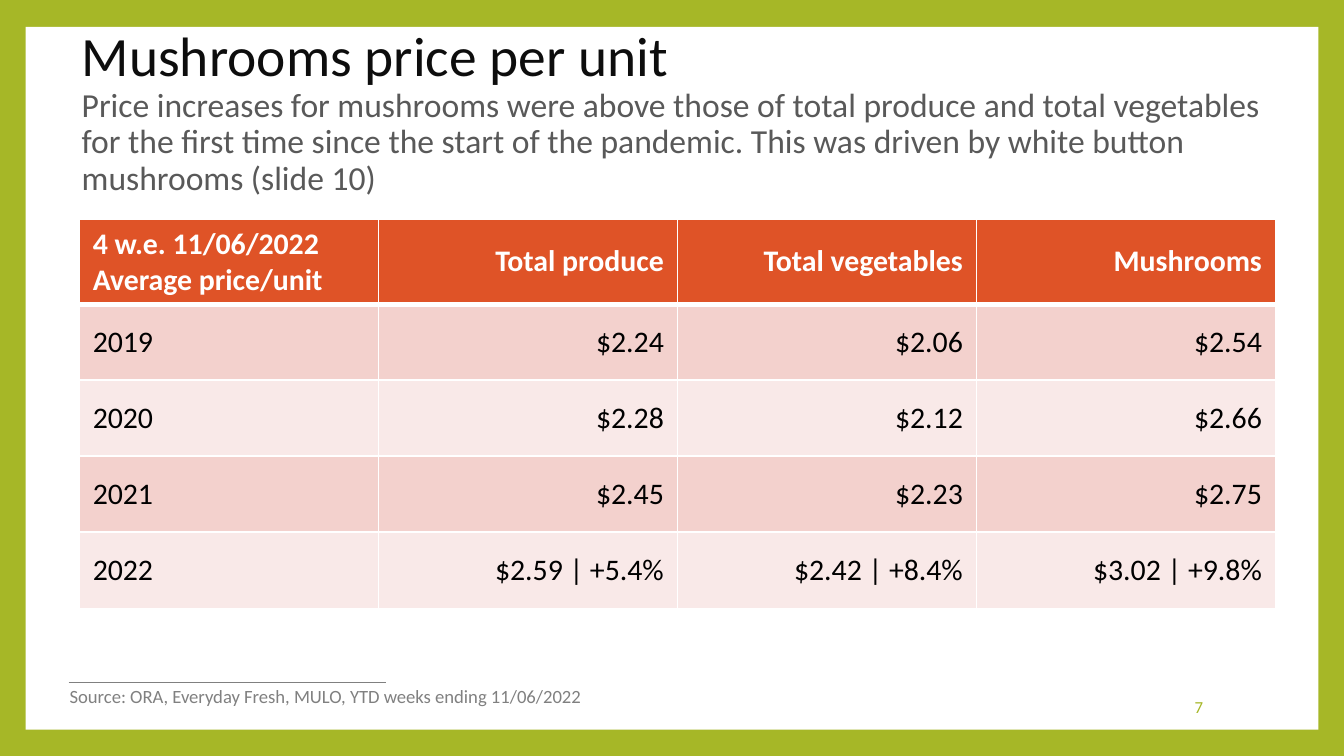
from lxml.etree import SubElement as Sub
from pptx import Presentation
from pptx.dml.color import RGBColor as RGB
from pptx.enum.shapes import MSO_CONNECTOR as Link, MSO_SHAPE as Form
from pptx.enum.text import MSO_ANCHOR as Anchor, PP_ALIGN as Align
from pptx.oxml.ns import qn
from pptx.util import Inches, Pt

GREEN = RGB(0xA6, 0xB7, 0x27)
WHITE = RGB(0xFF, 0xFF, 0xFF)
BLACK = RGB(0x00, 0x00, 0x00)
INK = RGB(0x0D, 0x0D, 0x0D)
SLATE = RGB(0x59, 0x59, 0x59)
GREY = RGB(0x80, 0x80, 0x80)
ORANGE = RGB(0xDF, 0x53, 0x27)
ROSE = RGB(0xF3, 0xD1, 0xCD)
BLUSH = RGB(0xF9, 0xE9, 0xE8)

COLS, ROWS = 100, 56.25
PRICES = [
    ["4 w.e. 11/06/2022\nAverage price/unit", "Total produce", "Total vegetables", "Mushrooms"],
    ["2019", "$2.24", "$2.06", "$2.54"],
    ["2020", "$2.28", "$2.12", "$2.66"],
    ["2021", "$2.45", "$2.23", "$2.75"],
    ["2022", "$2.59 | +5.4%", "$2.42 | +8.4%", "$3.02 | +9.8%"],
]


def grid(*cells):
    """Turn grid columns or rows into lengths."""
    return [Inches(cell / 10) for cell in cells]


def write(par, text, size=16, color=BLACK, bold=False, align=Align.LEFT, font="Calibri"):
    """Add a formatted run to a paragraph."""
    par.alignment = align
    run = par.add_run()
    run.text = text
    run.font.name, run.font.size, run.font.bold = font, Pt(size), bold
    run.font.color.rgb = color


def edge(cell, **widths):
    """Give a cell white borders of the named widths."""
    props = cell._tc.get_or_add_tcPr()
    for side, width in widths.items():
        line = Sub(props, qn(f"a:ln{side}"), w=str(Pt(width)))
        Sub(Sub(line, qn("a:solidFill")), qn("a:srgbClr"), val=str(WHITE))


class Deck:
    """Hold the style and the current slide."""

    def __init__(self):
        """Open a blank slide with a green ground."""
        self.file = Presentation()
        self.file.slide_width, self.file.slide_height = grid(COLS, ROWS)
        self.slide = self.file.slides.add_slide(self.file.slide_layouts[6])
        ground = self.slide.background.fill
        ground.solid()
        ground.fore_color.rgb = GREEN

    def panel(self, *box):
        """Draw a plain white panel."""
        shape = self.slide.shapes.add_shape(Form.RECTANGLE, *grid(*box))
        shape.shadow.inherit = False
        shape.fill.solid()
        shape.fill.fore_color.rgb = WHITE
        shape.line.fill.background()

    def rule(self, *ends):
        """Draw a thin grey rule."""
        line = self.slide.shapes.add_connector(Link.STRAIGHT, *grid(*ends))
        line.line.color.rgb, line.line.width = GREY, Pt(0.79)
        Sub(line._element.spPr, qn("a:effectLst"))

    def text(self, *box, anchor=Anchor.MIDDLE):
        """Add a text box and return its first paragraph."""
        frame = self.slide.shapes.add_textbox(*grid(*box)).text_frame
        frame.word_wrap, frame.vertical_anchor = True, anchor
        return frame.paragraphs[0]

    def table(self, data, left, top, width, head, step):
        """Add a table with a tall head row and striped rows."""
        size = grid(left, top, width, head + step * (len(data) - 1))
        table = self.slide.shapes.add_table(len(data), len(data[0]), *size).table
        for i, row in enumerate(data):
            table.rows[i].height = grid(step if i else head)[0]
            for j, text in enumerate(row):
                self.cell(table.cell(i, j), text, i, j)

    def cell(self, cell, text, row, col):
        """Fill one cell by its place in the table."""
        edge(cell, L=1, R=1, T=3 if row == 1 else 1, B=1 if row else 3)
        cell.fill.solid()
        cell.fill.fore_color.rgb = (ROSE if row % 2 else BLUSH) if row else ORANGE
        cell.vertical_anchor = Anchor.MIDDLE
        frame = cell.text_frame
        for k, part in enumerate(text.split("\n")):
            par = frame.add_paragraph() if k else frame.paragraphs[0]
            write(par, part, color=BLACK if row else WHITE, bold=not row,
                  align=Align.RIGHT if col else Align.LEFT)


def main():
    """Build and save the slide."""
    deck = Deck()
    deck.panel(1.9, 2, 96.2, 52.3)
    deck.rule(5.1, 50.8, 28.7, 50.8)
    title = deck.text(5.1, 5.7, 90.6, 5.4)
    title.line_spacing = 0.9
    write(title, "Mushrooms price per unit", size=29.7, color=INK)
    title.add_line_break()
    write(title, "Price increases for mushrooms were above those of total produce and total "
          "vegetables for the first time since the start of the pandemic. This was driven by "
          "white button mushrooms (slide 10)", size=18, color=SLATE)
    write(deck.text(76.5, 51.1, 14, 3), "7", size=9, color=GREEN, align=Align.RIGHT)
    write(deck.text(4.2, 50.5, 44, 2.7, anchor=Anchor.TOP),
          "Source: ORA, Everyday Fresh, MULO, YTD weeks ending 11/06/2022", size=10, color=GREY)
    deck.table(PRICES, 5.9, 16.3, 89, 6.3, 5.66)
    deck.file.save("out.pptx")


if __name__ == "__main__":
    main()
